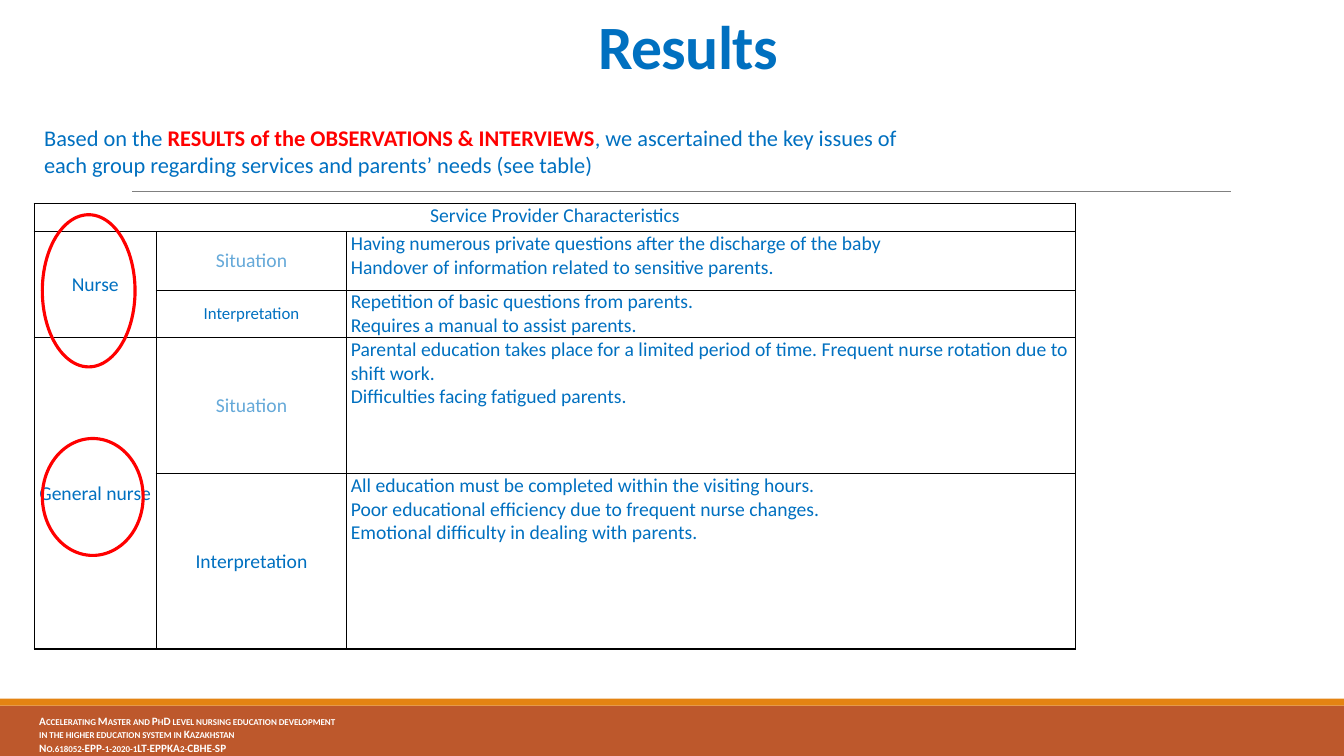
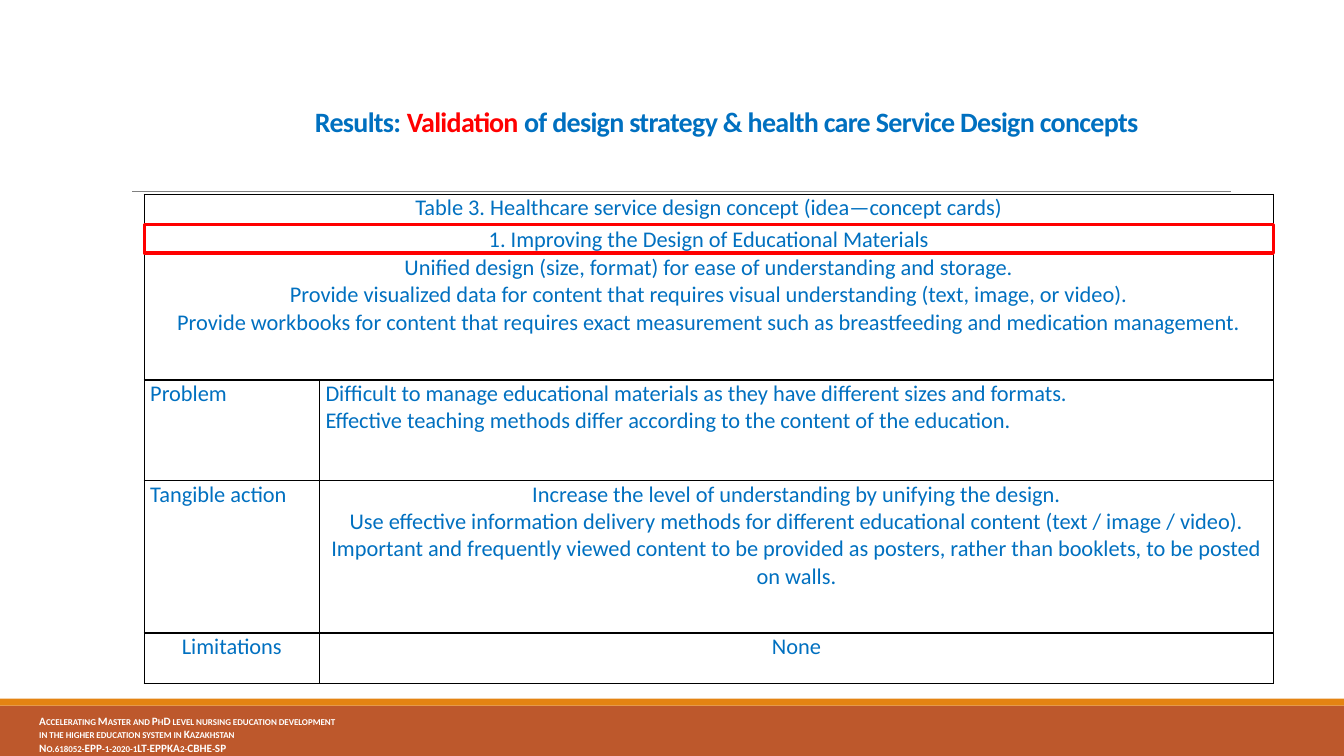
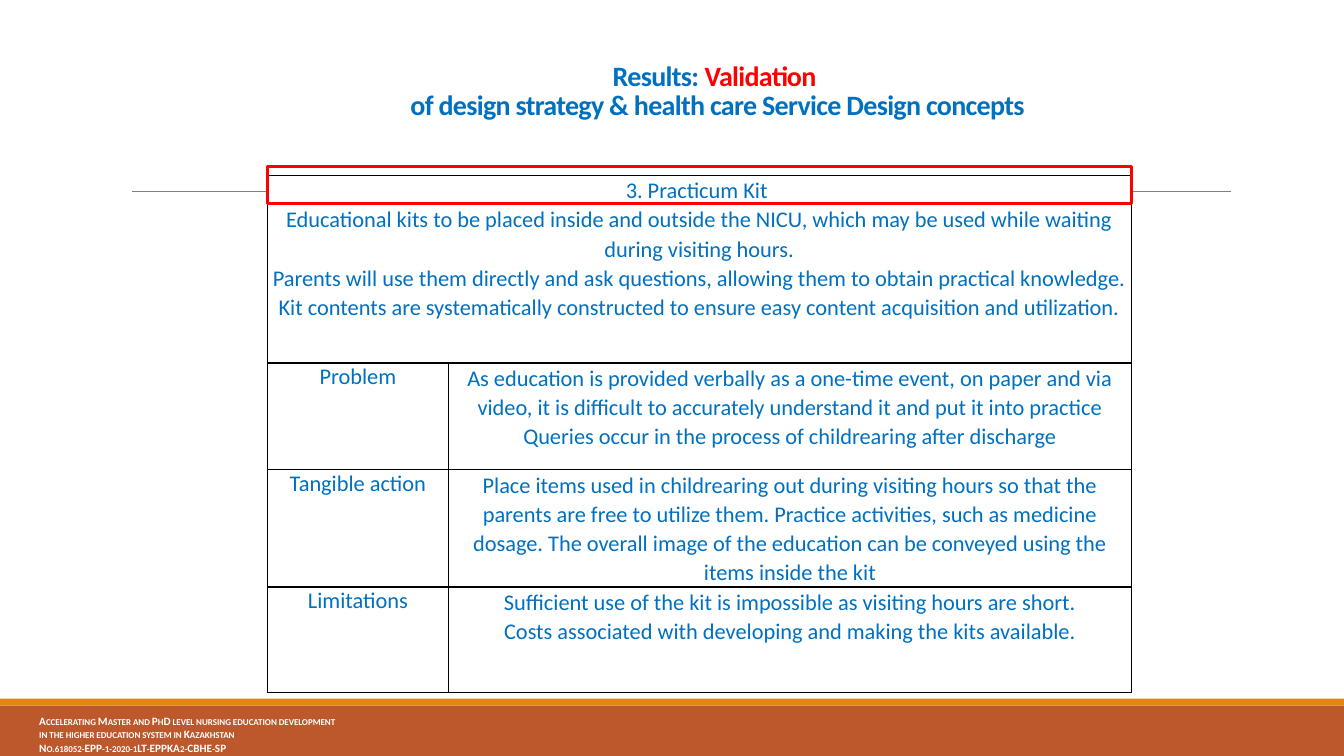
from lxml.etree import SubElement
from pptx import Presentation
from pptx.dml.color import RGBColor as Rgb
from pptx.enum.shapes import MSO_CONNECTOR as Link, MSO_SHAPE as Kind
from pptx.enum.text import MSO_ANCHOR as Anchor, MSO_AUTO_SIZE as Auto, PP_ALIGN as Align
from pptx.oxml.ns import qn
from pptx.util import Inches, Pt

HUES = {
    "blue": "0070C0", "pale": "65A9D9", "red": "FF0000", "white": "FFFFFF",
    "black": "000000", "gray": "808080", "rust": "BD582C", "amber": "E48312",
}
WIDE, HIGH = Inches(13.33), Inches(7.5)
TITLE = {"size": Pt(20), "bold": True}
BANNER = {"size": Pt(44), "bold": True}
FOOT = {"size": Pt(8), "bold": True}
MID = {"align": Align.CENTER, "anchor": Anchor.MIDDLE}
LEFT = {"align": Align.LEFT}
TIGHT = {"gap": 1}
FOOTER = [
    "Accelerating Master and PhD level nursing education development",
    "in the higher education system in Kazakhstan",
    "No.618052-EPP-1-2020-1LT-EPPKA2-CBHE-SP",
]


def tint(name):
    return Rgb.from_string(HUES[name])


def spot(box):
    x, y, w, h = box
    return [int(part * side / 100) for part, side in
            ((x, WIDE), (y, HIGH), (w, WIDE), (h, HIGH))]


def style(item, form):
    for key, value in form.items():
        setattr(item, key, value)


def write(frame, lines, font, hue="blue", para=None, extra=None):
    for i, line in enumerate(lines):
        row = frame.add_paragraph() if i else frame.paragraphs[0]
        style(row, para or {})
        for piece in [line] if isinstance(line, str) else line:
            text, shade, form = piece if isinstance(piece, tuple) else (piece, hue, {})
            run = row.add_run()
            run.text = text
            style(run.font, {"name": "Calibri", **font, **form})
            run.font.color.rgb = tint(shade)
            for key, value in (extra or {}).items():
                run.font._element.set(key, value)


def block(slide, box, fill):
    shape = slide.shapes.add_shape(Kind.RECTANGLE, *spot(box))
    shape.shadow.inherit = False
    shape.fill.solid()
    shape.fill.fore_color.rgb = tint(fill)
    shape.line.fill.background()
    return shape


def mark(slide, kind, box):
    shape = slide.shapes.add_shape(kind, *spot(box))
    shape.shadow.inherit = False
    shape.fill.background()
    shape.line.color.rgb = tint("red")
    shape.line.width = Pt(2.25)


def note(slide, box, lines, font, hue="blue", extra=None):
    shape = slide.shapes.add_textbox(*spot(box))
    shape.text_frame.word_wrap = True
    write(shape.text_frame, lines, font, hue, extra=extra)
    return shape


def rule(slide, left, right, top):
    x, y, w, _ = spot((left, top, right - left, 0))
    line = slide.shapes.add_connector(Link.STRAIGHT, x, y, x + w, y)
    line.line.color.rgb = tint("gray")
    line.line.width = Pt(0.5)
    SubElement(line.element.spPr, qn("a:effectLst"))
    return line


def share(slide, layout):
    parts = [
        block(slide, (0, 93.33, 100, 6.67), "rust"),
        block(slide, (0, 92.4, 100, 0.93), "amber"),
        rule(slide, 9.83, 91.6, 25.33),
        note(slide, (2.18, 93.8, 34.43, 6.2), FOOTER, FOOT, "white", {"cap": "small"}),
    ]
    for part in parts:
        layout.shapes.element.append(part.element)


def head(slide, box, lines, font=TITLE):
    title = slide.shapes.title
    style(title, dict(zip(("left", "top", "width", "height"), spot(box))))
    style(title.text_frame, {"auto_size": Auto.NONE, "word_wrap": True,
                             "vertical_anchor": Anchor.BOTTOM})
    write(title.text_frame, lines, font,
          para={"alignment": Align.CENTER, "line_spacing": 0.85}, extra={"spc": "-50"})


def edge(cell):
    props = cell._tc.get_or_add_tcPr()
    for side in ("lnL", "lnR", "lnT", "lnB"):
        line = SubElement(props, qn("a:" + side), w=str(Pt(1)))
        fill = SubElement(line, qn("a:solidFill"))
        SubElement(fill, qn("a:srgbClr"), val=HUES["black"])


def grid(slide, box, cols, rows, cells, size, inset, fill=None, gap=1):
    x, y, w, h = spot(box)
    table = slide.shapes.add_table(len(rows), len(cols), x, y, w, h).table
    style(table, {"first_row": False, "horz_banding": False})
    for col, part in zip(table.columns, cols):
        col.width = int(w * part / sum(cols))
    for row, part in zip(table.rows, rows):
        row.height = int(h * part / sum(rows))
    pad = Inches(inset)
    for r, line in enumerate(cells):
        for c, item in enumerate(line):
            cell = table.cell(r, c)
            edge(cell)
            if fill:
                cell.fill.solid()
                cell.fill.fore_color.rgb = tint(fill)
            else:
                cell.fill.background()
            if item is None:
                continue
            lines, form = item
            style(cell, {"margin_left": pad, "margin_right": pad,
                         "margin_top": 0, "margin_bottom": 0,
                         "vertical_anchor": form.get("anchor", Anchor.TOP)})
            write(cell.text_frame, lines, {"size": Pt(form.get("size", size))},
                  form.get("hue", "blue"),
                  {"alignment": form.get("align", Align.CENTER),
                   "line_spacing": form.get("gap", gap)})
            if "span" in form:
                down, over = form["span"]
                cell.merge(table.cell(r + down - 1, c + over - 1))


def needs(slide):
    head(slide, (4.95, -0.27, 92.5, 11.73), ["Results"], BANNER)
    note(slide, (2.55, 15.73, 66.24, 8.53), [[
        "Based on the ",
        ("RESULTS of the OBSERVATIONS & INTERVIEWS", "red", {"bold": True}),
        ", we ascertained the key issues of each group regarding services and parents’ needs (see table)",
    ]], {"size": Pt(16)})
    role = {**MID, "span": (2, 1)}
    pale = {**MID, "hue": "pale"}
    cells = [
        [(["Service Provider Characteristics"], {"span": (1, 3)}), None, None],
        [(["Nurse"], role), (["Situation"], pale),
         (["Having numerous private questions after the discharge of the baby",
           "Handover of information related to sensitive parents."], LEFT)],
        [None, (["Interpretation"], {**MID, "size": 12}),
         (["Repetition of basic questions from parents.",
           "Requires a manual to assist parents."], LEFT)],
        [(["General nurse"], role), (["Situation"], pale),
         (["Parental education takes place for a limited period of time. Frequent nurse rotation due to shift work.",
           "Difﬁculties facing fatigued parents."], LEFT)],
        [None, (["Interpretation"], MID),
         (["All education must be completed within the visiting hours.",
           "Poor educational efﬁciency due to frequent nurse changes.",
           "Emotional difﬁculty in dealing with parents."], LEFT)],
    ]
    grid(slide, (2.55, 26.93, 77.49, 58.93), (1.21, 1.89, 7.23),
         (0.28, 0.58, 0.47, 1.35, 1.74), cells, 14, 0.04)
    for box in ((3.15, 28.4, 6.9, 20.13), (3.15, 58, 7.5, 15.47)):
        mark(slide, Kind.OVAL, box)


def design(slide):
    head(slide, (19.73, 4.13, 68.64, 14.8), [[
        "Results: ", ("Validation", "red", {}),
        " of design strategy & health care Service Design concepts"]])
    full = {"span": (1, 2)}
    cells = [
        [(["Table 3. Healthcare service design concept (idea—concept cards)"], full), None],
        [(["1. Improving the Design of Educational Materials"], full), None],
        [(["Uniﬁed design (size, format) for ease of understanding and storage.",
           "Provide visualized data for content that requires visual understanding (text, image, or video).",
           "Provide workbooks for content that requires exact measurement such as breastfeeding and medication management."],
          full), None],
        [(["Problem"], LEFT),
         (["Difﬁcult to manage educational materials as they have different sizes and formats.",
           "Effective teaching methods differ according to the content of the education."], LEFT)],
        [(["Tangible action"], LEFT),
         (["Increase the level of understanding by unifying the design.",
           "Use effective information delivery methods for different educational content (text / image / video).",
           "Important and frequently viewed content to be provided as posters, rather than booklets, to be posted on walls."],
          {})],
        [(["Limitations"], {}), (["None"], {})],
    ]
    grid(slide, (10.73, 25.73, 84.02, 64.67), (1.74, 9.47),
         (0.31, 0.28, 1.25, 1, 1.51, 0.5), cells, 16, 0.06, "white")
    mark(slide, Kind.RECTANGLE, (10.73, 29.73, 84.02, 3.73))


def kit(slide):
    head(slide, (16.43, 1.87, 73.89, 14.8), [
        ["Results: ", ("Validation ", "red", {})],
        "of design strategy & health care Service Design concepts"])
    full = {"span": (1, 2)}
    cells = [
        [(["3. Practicum Kit "], full), None],
        [(["Educational kits to be placed inside and outside the NICU, which may be used while waiting during visiting hours.",
           "Parents will use them directly and ask questions, allowing them to obtain practical knowledge.",
           "Kit contents are systematically constructed to ensure easy content acquisition and utilization."],
          full), None],
        [(["Problem"], TIGHT),
         (["As education is provided verbally as a one-time event, on paper and via video, it is difficult to accurately understand it and put it into practice",
           "Queries occur in the process of childrearing after discharge"], {})],
        [(["Tangible action"], TIGHT),
         (["Place items used in childrearing out during visiting hours so that the parents are free to utilize them. Practice activities, such as medicine dosage. The overall image of the education can be conveyed using the items inside the kit"], {})],
        [(["Limitations"], TIGHT),
         (["Sufficient use of the kit is impossible as visiting hours are short.",
           "Costs associated with developing and making the kits available."], {})],
    ]
    grid(slide, (19.88, 23.2, 64.29, 68.27), (1.8, 6.77),
         (0.29, 1.57, 1.06, 1.15, 1.05), cells, 16, 0.05, "white", 1.07)
    mark(slide, Kind.RECTANGLE, (19.88, 22, 64.29, 4.93))


def main():
    deck = Presentation()
    style(deck, {"slide_width": WIDE, "slide_height": HIGH})
    layout = deck.slide_layouts[5]
    for i, build in enumerate((needs, design, kit)):
        slide = deck.slides.add_slide(layout)
        if i == 0:
            share(slide, layout)
        build(slide)
    deck.save("out.pptx")


if __name__ == "__main__":
    main()
